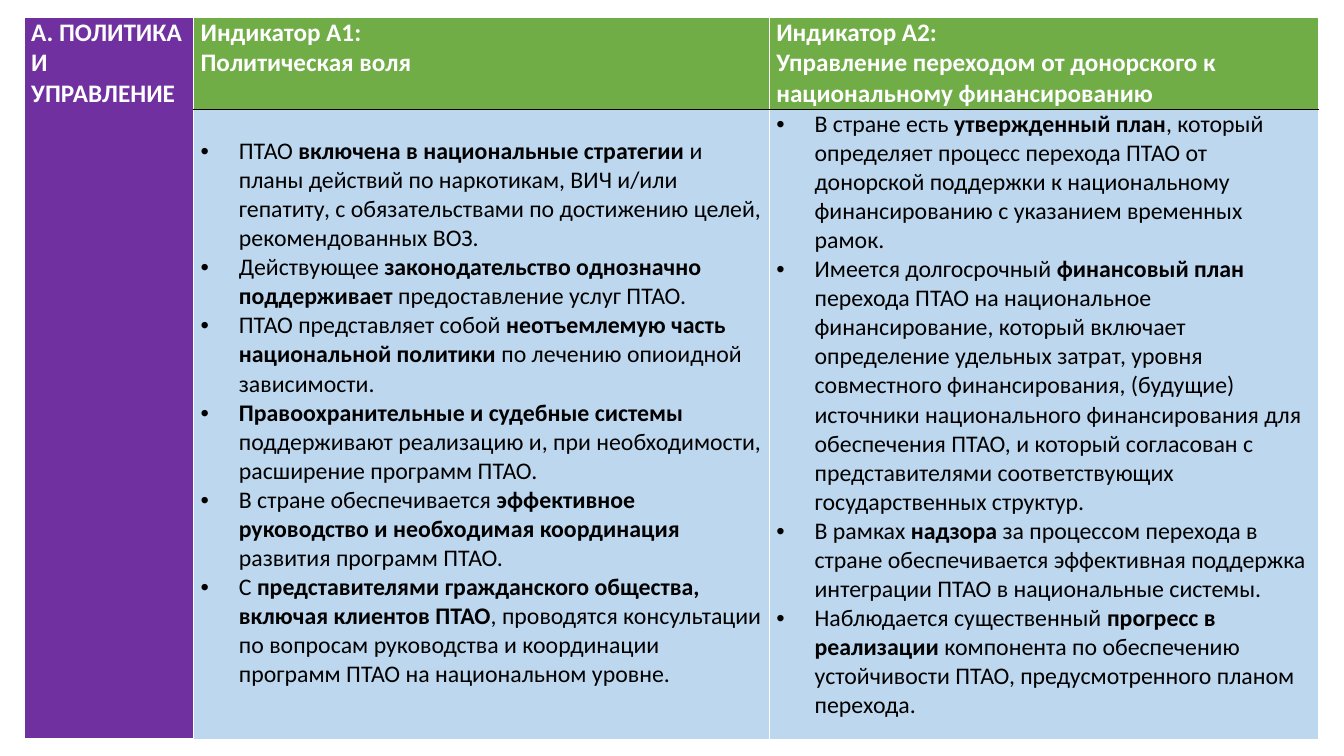
from lxml import etree
from pptx import Presentation
from pptx.dml.color import RGBColor
from pptx.oxml.ns import qn
from pptx.util import Inches, Pt

WHITE = RGBColor(0xFF, 0xFF, 0xFF)
BLACK = RGBColor(0, 0, 0)
PURPLE = RGBColor(0x70, 0x30, 0xA0)
GREEN = RGBColor(0x70, 0xAD, 0x47)
BLUE = RGBColor(0xBD, 0xD7, 0xEE)
FONT = "Calibri"

SECTION = ["A. ПОЛИТИКА И УПРАВЛЕНИЕ"]
HEADERS = [
    ["Индикатор A1:", "Политическая воля"],
    ["Индикатор A2:",
     "Управление переходом от донорского к национальному финансированию"],
]
# Each criterion: plain text, bold text, plain text
CRITERIA = [
    [
        ("ПТАО ", "включена в национальные стратегии ",
         "и планы действий по наркотикам, ВИЧ и/или гепатиту, с обязательствами "
         "по достижению целей, рекомендованных ВОЗ."),
        ("Действующее ", "законодательство однозначно поддерживает ",
         "предоставление услуг ПТАО."),
        ("ПТАО представляет собой ", "неотъемлемую часть национальной политики ",
         "по лечению опиоидной зависимости."),
        ("", "Правоохранительные и судебные системы ",
         "поддерживают реализацию и, при необходимости, расширение программ ПТАО."),
        ("В стране обеспечивается ",
         "эффективное руководство и необходимая координация ",
         "развития программ ПТАО."),
        ("С ", "представителями гражданского общества, включая клиентов ПТАО",
         ", проводятся консультации по вопросам руководства и координации "
         "программ ПТАО на национальном уровне."),
    ],
    [
        ("В стране есть ", "утвержденный план",
         ", который определяет процесс перехода ПТАО от донорской поддержки "
         "к национальному финансированию с указанием временных рамок."),
        ("Имеется долгосрочный ", "финансовый план ",
         "перехода ПТАО на национальное финансирование, который включает "
         "определение удельных затрат, уровня совместного финансирования, "
         "(будущие) источники национального финансирования для обеспечения ПТАО, "
         "и который согласован с представителями соответствующих "
         "государственных структур."),
        ("В рамках ", "надзора",
         " за процессом перехода в стране обеспечивается эффективная поддержка "
         "интеграции ПТАО в национальные системы."),
        ("Наблюдается существенный ", "прогресс в реализации ",
         "компонента по обеспечению устойчивости ПТАО, предусмотренного "
         "планом перехода."),
    ],
]
LEFT, TOP = 0.24, 0.17
COL_WIDTHS = [1.68, 5.71, 5.45]
ROW_HEIGHTS = [0.91, 6.25]
CRITERIA_TOPS = [0.27, 0]
INDENT = 0.38


def style_cell(cell, fill, top=WHITE, bottom=WHITE, bottom_width=1, margin_top=0):
    cell.margin_left = cell.margin_right = Inches(0.07)
    cell.margin_top, cell.margin_bottom = Inches(margin_top), 0
    cell.fill.solid()
    cell.fill.fore_color.rgb = fill
    tcPr = cell._tc.get_or_add_tcPr()
    sides = [("a:lnL", WHITE, 1), ("a:lnR", WHITE, 1),
             ("a:lnT", top, 1), ("a:lnB", bottom, bottom_width)]
    for i, (tag, color, width) in enumerate(sides):
        ln = etree.Element(qn(tag), w=str(Pt(width)))
        solid = etree.SubElement(ln, qn("a:solidFill"))
        etree.SubElement(solid, qn("a:srgbClr"), val=str(color))
        tcPr.insert(i, ln)


def add_run(p, text, size, color, bold):
    r = p.add_run()
    r.text = text
    r.font.name, r.font.size, r.font.bold = FONT, Pt(size), bold
    r.font.color.rgb = color


def paragraphs(cell, items):
    tf = cell.text_frame
    for i, item in enumerate(items):
        yield (tf.add_paragraph() if i else tf.paragraphs[0]), item


def write_heading(cell, lines):
    for p, line in paragraphs(cell, lines):
        add_run(p, line, 18, WHITE, True)


def write_criteria(cell, items):
    for p, parts in paragraphs(cell, items):
        pPr = p._p.get_or_add_pPr()
        pPr.set("marL", str(Inches(INDENT)))
        pPr.set("indent", str(-Inches(INDENT)))
        etree.SubElement(pPr, qn("a:buFont"), typeface="Arial")
        etree.SubElement(pPr, qn("a:buChar"), char="•")
        for i, text in enumerate(parts):
            if text:
                add_run(p, text, 17, BLACK, i == 1)


prs = Presentation()
prs.slide_width, prs.slide_height = Inches(13.33), Inches(7.5)
s = prs.slides.add_slide(prs.slide_layouts[6])
table = s.shapes.add_table(
    2, 3, Inches(LEFT), Inches(TOP),
    Inches(sum(COL_WIDTHS)), Inches(sum(ROW_HEIGHTS))).table
for col, width in zip(table.columns, COL_WIDTHS):
    col.width = Inches(width)
for row, height in zip(table.rows, ROW_HEIGHTS):
    row.height = Inches(height)

for row in range(2):
    style_cell(table.cell(row, 0), PURPLE, bottom_width=3)
table.cell(0, 0).merge(table.cell(1, 0))
write_heading(table.cell(0, 0), SECTION)

for col, (header, criteria, top) in enumerate(
        zip(HEADERS, CRITERIA, CRITERIA_TOPS), start=1):
    style_cell(table.cell(0, col), GREEN, bottom=BLACK)
    write_heading(table.cell(0, col), header)
    style_cell(table.cell(1, col), BLUE, top=BLACK, margin_top=top)
    write_criteria(table.cell(1, col), criteria)

prs.save("out.pptx")
